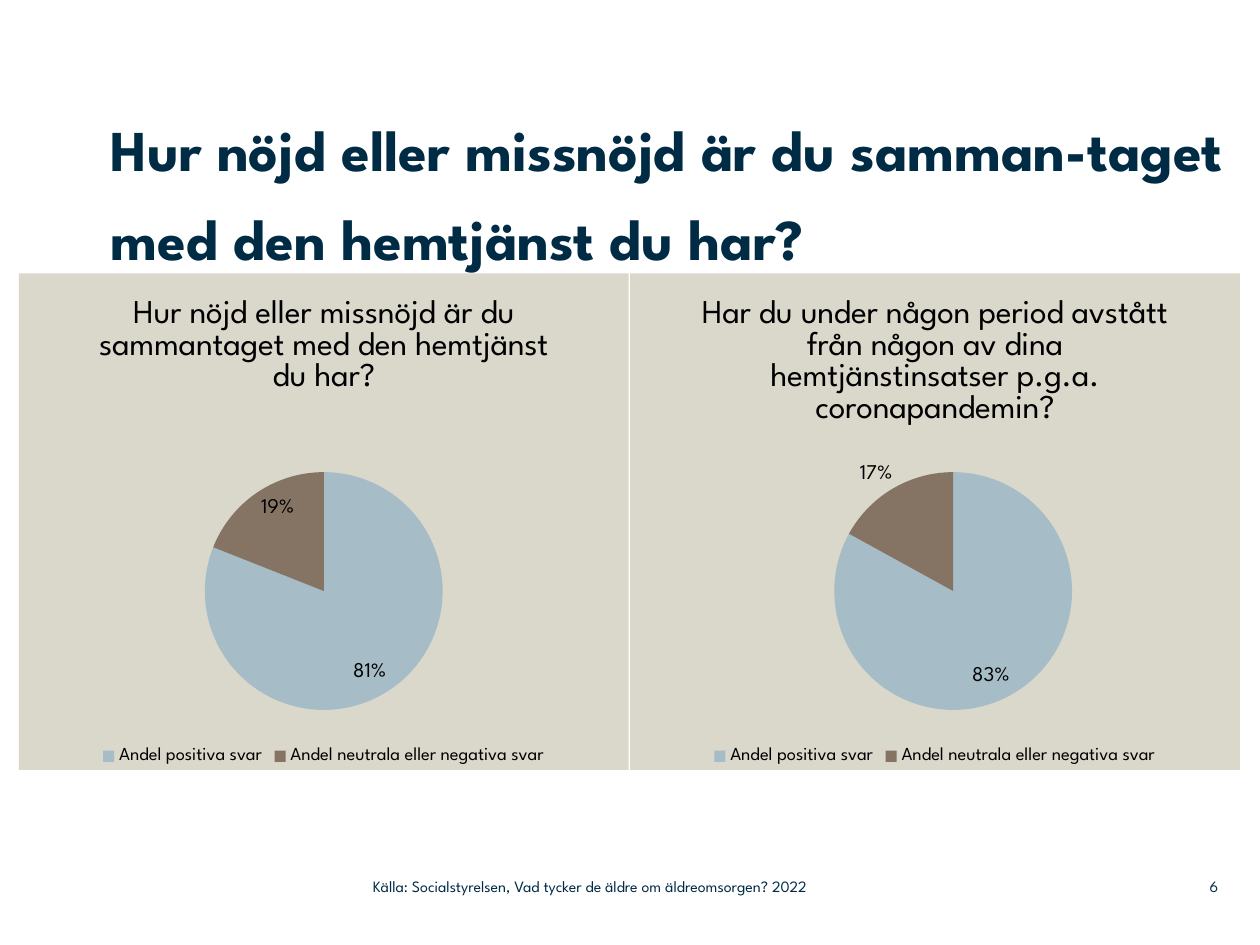
from lxml import etree
from pptx import Presentation
from pptx.chart.data import CategoryChartData
from pptx.dml.color import RGBColor
from pptx.enum.chart import XL_CHART_TYPE, XL_LABEL_POSITION, XL_LEGEND_POSITION
from pptx.enum.text import MSO_ANCHOR, MSO_AUTO_SIZE, PP_ALIGN
from pptx.oxml.ns import qn
from pptx.util import Inches, Pt

PIE = XL_CHART_TYPE.PIE
INSIDE_END = XL_LABEL_POSITION.INSIDE_END
LEGEND_BOTTOM = XL_LEGEND_POSITION.BOTTOM
TOP, MIDDLE = MSO_ANCHOR.TOP, MSO_ANCHOR.MIDDLE
NO_AUTOFIT = MSO_AUTO_SIZE.NONE
LEFT, RIGHT = PP_ALIGN.LEFT, PP_ALIGN.RIGHT

FONT = "League Spartan"
NAVY = RGBColor(0x00, 0x2B, 0x45)
BLACK = RGBColor(0x00, 0x00, 0x00)
SAND = RGBColor(0xDA, 0xD7, 0xCB)
BLUE = RGBColor(0xA6, 0xBC, 0xC6)
BROWN = RGBColor(0x85, 0x73, 0x63)

CATEGORIES = ["Andel positiva svar", "Andel neutrala eller negativa svar"]


def format_font(font, size, color=BLACK, bold=False):
    font.name = FONT
    font.size = Pt(size)
    font.bold = bold
    font.color.rgb = color


def write_text(shape, text, size=9, bold=False, align=LEFT, anchor=MIDDLE, spacing=None):
    frame = shape.text_frame
    frame.word_wrap = True
    frame.auto_size = NO_AUTOFIT
    frame.vertical_anchor = anchor
    frame.margin_left = frame.margin_right = frame.margin_top = frame.margin_bottom = 0
    paragraph = frame.paragraphs[0]
    paragraph.alignment = align
    if spacing:
        paragraph.line_spacing = spacing
    run = paragraph.add_run()
    run.text = text
    format_font(run.font, size, NAVY, bold)


def add_title(slide, left, top, width, height):
    title = slide.shapes.title
    title.left, title.top, title.width, title.height = (
        Inches(value) for value in (left, top, width, height))
    write_text(title, "Hur nöjd eller missnöjd är du samman-taget med den hemtjänst du har?",
               size=33, bold=True, anchor=TOP, spacing=1.28)


def add_label(slide, text, left, top, width, height, **text_format):
    box = slide.shapes.add_textbox(Inches(left), Inches(top), Inches(width), Inches(height))
    write_text(box, text, **text_format)


def make_layout(**settings):
    """Return a c:layout element with the given manual settings."""
    layout = etree.Element(qn("c:layout"))
    manual = etree.SubElement(layout, qn("c:manualLayout"))
    for name, value in settings.items():
        etree.SubElement(manual, qn(f"c:{name}")).set("val", str(value))
    return layout


def set_plot_area(chart, x, y, w, h):
    plot_area = chart.plots[0]._element.getparent()
    for old_layout in plot_area.findall(qn("c:layout")):
        plot_area.remove(old_layout)
    plot_area.insert(0, make_layout(layoutTarget="inner", xMode="edge", yMode="edge",
                                    x=x, y=y, w=w, h=h))


def move_point_label(point, x, y):
    """Shift one percentage label by fractions of the chart size."""
    label = point.data_label
    format_font(label.font, 12)
    label.position = INSIDE_END
    element = point._element.find(f".//{qn('c:dLbl')}") if hasattr(point, "_element") else None
    if element is None:
        element = label._get_or_add_dLbl()
    element.find(qn("c:showVal")).set("val", "0")
    element.find(qn("c:showPercent")).set("val", "1")
    element.insert(1, make_layout(x=x, y=y))


def add_pie(slide, title, values, plot_area, left, top, width, height, label_shift=None):
    chart_data = CategoryChartData()
    chart_data.categories = CATEGORIES
    chart_data.add_series("Series 1", values)
    chart = slide.shapes.add_chart(PIE, Inches(left), Inches(top), Inches(width),
                                   Inches(height), chart_data).chart
    format_font(chart.font, 18)

    # Background panel
    properties = etree.Element(qn("c:spPr"))
    fill = etree.SubElement(properties, qn("a:solidFill"))
    etree.SubElement(fill, qn("a:srgbClr")).set("val", str(SAND))
    line = etree.SubElement(properties, qn("a:ln"))
    etree.SubElement(line, qn("a:noFill"))
    chart._chartSpace.find(qn("c:chart")).addnext(properties)

    # Heading and legend
    chart.has_title = True
    chart.chart_title.include_in_layout = False
    paragraph = chart.chart_title.text_frame.paragraphs[0]
    run = paragraph.add_run()
    run.text = title
    format_font(run.font, 19)
    chart.has_legend = True
    chart.legend.position = LEGEND_BOTTOM
    chart.legend.include_in_layout = False
    format_font(chart.legend.font, 10.5)

    # Slices and percentages
    set_plot_area(chart, *plot_area)
    plot = chart.plots[0]
    plot.vary_by_categories = True
    series = plot.series[0]
    for index, color in enumerate((BLUE, BROWN)):
        slice_fill = series.points[index].format.fill
        slice_fill.solid()
        slice_fill.fore_color.rgb = color
    labels = series.data_labels
    labels.show_value = False
    labels.show_percentage = True
    labels.position = INSIDE_END
    format_font(labels.font, 12)
    if label_shift:
        move_point_label(series.points[1], *label_shift)


def main():
    presentation = Presentation()
    presentation.slide_width = Inches(10)
    presentation.slide_height = Inches(7.5)
    slide = presentation.slides.add_slide(presentation.slide_layouts[5])

    add_title(slide, 0.88, 0.75, 8.94, 1.42)

    # Two equal charts side by side
    chart_size = (4.84, 3.94)
    add_pie(slide, "Har du under någon period avstått från någon av dina "
            "hemtjänstinsatser p.g.a. coronapandemin?",
            (83, 17), (0.335, 0.4, 0.39, 0.48), 5, 2.17, *chart_size,
            label_shift=(-0.06, -0.06))
    add_pie(slide, "Hur nöjd eller missnöjd är du sammantaget med den hemtjänst du har?",
            (81, 19), (0.305, 0.4, 0.39, 0.48), 0.15, 2.17, *chart_size)

    # Footer
    add_label(slide, "Källa: Socialstyrelsen, Vad tycker de äldre om äldreomsorgen? 2022",
              2.96, 6.89, 4.43, 0.29)
    add_label(slide, "6", 9.2, 6.89, 0.47, 0.29, align=RIGHT)

    presentation.save("out.pptx")


if __name__ == "__main__":
    main()
